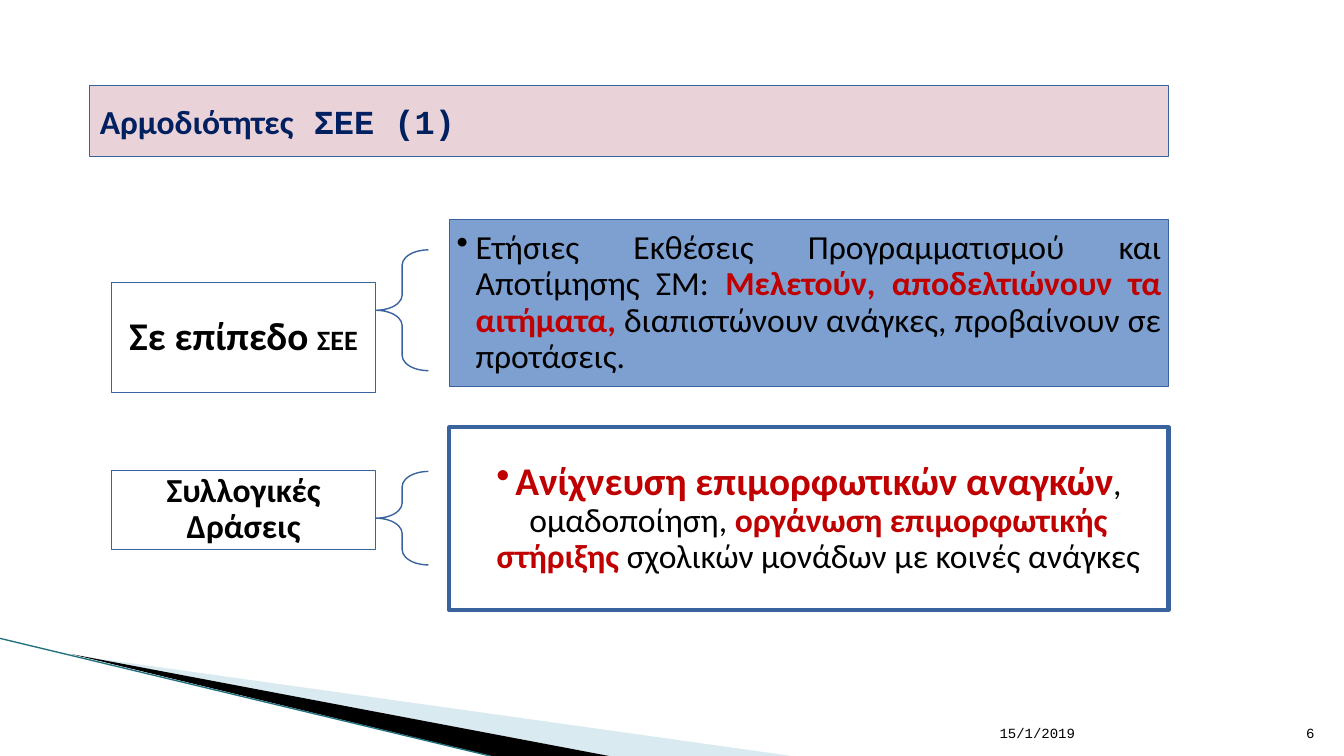
from lxml.etree import SubElement
from pptx import Presentation
from pptx.dml.color import RGBColor
from pptx.enum.shapes import MSO_CONNECTOR, MSO_SHAPE
from pptx.enum.text import MSO_ANCHOR, PP_ALIGN
from pptx.oxml.ns import qn
from pptx.util import Pt

PX = 9525  # EMU per px, 96 px to the inch

BLACK = RGBColor(0x00, 0x00, 0x00)
WHITE = RGBColor(0xFF, 0xFF, 0xFF)
NAVY = RGBColor(0x00, 0x20, 0x60)
RED = RGBColor(0xC0, 0x00, 0x00)
OUTLINE = RGBColor(0x39, 0x63, 0x9D)
PINK = RGBColor(0xEA, 0xD3, 0xD8)
PANEL_BLUE = RGBColor(0x7D, 0xA0, 0xD0)
PALE_BLUE = RGBColor(0xA0, 0xCB, 0xDC)
TEAL = RGBColor(0x20, 0x70, 0x7F)


def add_box(kind, place, fill, weight):
    """Add an outlined preset shape; a fill of None leaves it clear."""
    box = page.shapes.add_shape(kind, *(value * PX for value in place))
    box.shadow.inherit = False
    if fill is None:
        box.fill.background()
    else:
        box.fill.solid()
        box.fill.fore_color.rgb = fill
    box.line.color.rgb = OUTLINE
    box.line.width = Pt(weight)
    return box


def write(box, runs, align, anchor, insets, bullet=False):
    """Fill a box with one paragraph of (text, font, size, colour, bold) runs."""
    frame = box.text_frame
    frame.word_wrap = True
    frame.vertical_anchor = anchor
    side, top = insets
    frame.margin_left = frame.margin_right = side * PX
    frame.margin_top = frame.margin_bottom = top * PX
    para = frame.paragraphs[0]
    para.alignment = align
    if bullet:
        properties = para._p.get_or_add_pPr()
        properties.set("marL", str(18 * PX))
        properties.set("indent", str(-18 * PX))
        SubElement(properties, qn("a:buChar")).set("char", "•")
    for text, font, size, colour, bold in runs:
        span = para.add_run()
        span.text = text
        span.font.name = font
        span.font.size = Pt(size)
        span.font.color.rgb = colour
        span.font.bold = bold
    return para


deck = Presentation()
deck.slide_width = 1280 * PX
deck.slide_height = 720 * PX
page = deck.slides.add_slide(deck.slide_layouts[6])

# Corner decoration
wedges = [
    (PALE_BLUE, 40, [(70, 624), (754, 720), (580, 720)]),
    (BLACK, 100, [(68, 623), (580, 720), (468, 720)]),
]
for colour, opacity, corners in wedges:
    builder = page.shapes.build_freeform(*corners[0], scale=float(PX))
    builder.add_line_segments(corners[1:], close=True)
    wedge = builder.convert_to_shape()
    wedge.shadow.inherit = False
    wedge.fill.solid()
    wedge.fill.fore_color.rgb = colour
    wedge.line.fill.background()
    if opacity < 100:
        tint = wedge._element.spPr.find(qn("a:solidFill"))[0]
        SubElement(tint, qn("a:alpha")).set("val", str(opacity * 1000))

edge = page.shapes.add_connector(
    MSO_CONNECTOR.STRAIGHT, 0, 608 * PX, 467 * PX, 720 * PX)
edge.line.color.rgb = TEAL
edge.line.width = Pt(0.95)
SubElement(edge._element.spPr, qn("a:effectLst"))

# Date and slide number
for text, left, width, align in [
    ("15/1/2019", 942, 269, PP_ALIGN.LEFT),
    ("6", 1211, 51, PP_ALIGN.RIGHT),
]:
    footer = page.shapes.add_textbox(left * PX, 673 * PX, width * PX, 38 * PX)
    write(footer, [(text, "Courier New", 10, BLACK, False)],
          align, MSO_ANCHOR.BOTTOM, (10, 5))

# Title
title = add_box(MSO_SHAPE.RECTANGLE, (85, 81, 1028, 68), PINK, 0.75)
write(title, [
    ("Αρμοδιότητες", "Calibri", 24, NAVY, True),
    (" ΣΕΕ (1)", "Courier New", 24, NAVY, True),
], PP_ALIGN.LEFT, MSO_ANCHOR.MIDDLE, (10, 5))

# Each row: label, brace and panel, with (top, height) for each
rows = [
    {
        "label": (269, 105), "brace": (238, 115), "panel": (209, 159),
        "label_runs": [("Σε επίπεδο ", "Calibri", 28, BLACK, True),
                       ("ΣΕΕ", "Calibri", 20, BLACK, True)],
        "fill": PANEL_BLUE, "weight": 1, "align": PP_ALIGN.JUSTIFY,
        "panel_runs": [
            ("Ετήσιες Εκθέσεις Προγραμματισμού και Αποτίμησης ΣΜ: ",
             "Calibri", 24, BLACK, False),
            ("Μελετούν, αποδελτιώνουν τα αιτήματα,",
             "Calibri", 24, RED, True),
            (" διαπιστώνουν ανάγκες, προβαίνουν σε προτάσεις.",
             "Calibri", 24, BLACK, False),
        ],
    },
    {
        "label": (448, 75), "brace": (449, 89), "panel": (407, 174),
        "label_runs": [("Συλλογικές Δράσεις", "Calibri", 24, BLACK, True)],
        "fill": WHITE, "weight": 3, "align": PP_ALIGN.CENTER,
        "panel_runs": [
            ("Ανίχνευση επιμορφωτικών αναγκών", "Calibri", 28, RED, True),
            (", ομαδοποίηση, ", "Calibri", 24, BLACK, False),
            ("οργάνωση επιμορφωτικής στήριξης", "Calibri", 24, RED, True),
            (" σχολικών μονάδων με κοινές ανάγκες",
             "Calibri", 24, BLACK, False),
        ],
    },
]
for row in rows:
    top, height = row["label"]
    label = add_box(MSO_SHAPE.RECTANGLE, (106, top, 252, height), None, 0.75)
    para = write(label, row["label_runs"], PP_ALIGN.CENTER,
                 MSO_ANCHOR.MIDDLE, (12, 5))
    para.line_spacing = 0.9
    para.space_after = Pt(7)

    top, height = row["brace"]
    brace = add_box(MSO_SHAPE.LEFT_BRACE, (358, top, 50, height), None, 1)
    brace.adjustments[0] = 0.29

    top, height = row["panel"]
    panel = add_box(MSO_SHAPE.RECTANGLE, (428, top, 685, height),
                    row["fill"], row["weight"])
    para = write(panel, row["panel_runs"], row["align"],
                 MSO_ANCHOR.MIDDLE, (7, 7), bullet=True)
    para.line_spacing = 0.9
    para.space_after = Pt(3)

deck.save("out.pptx")
